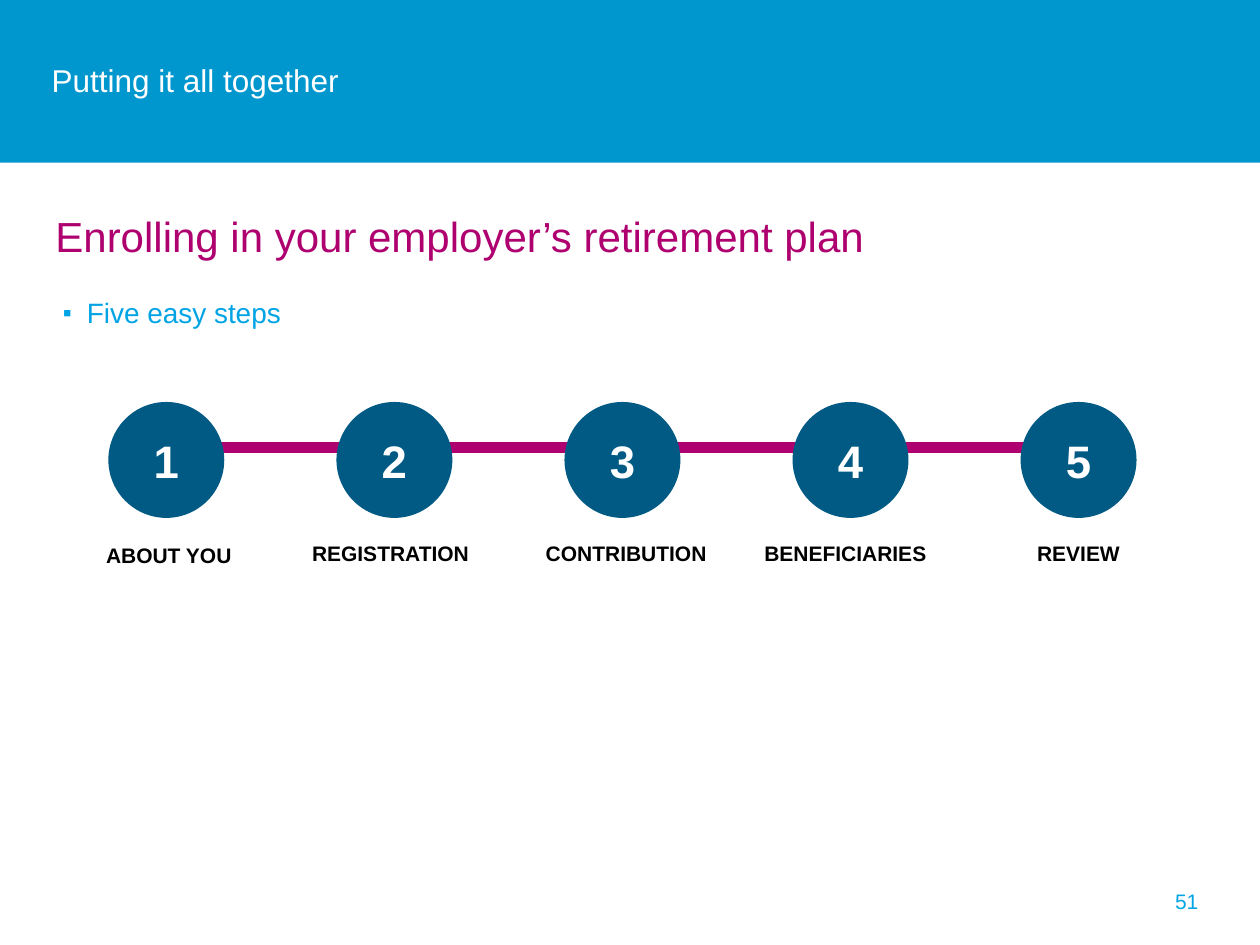
from lxml.etree import SubElement
from pptx import Presentation
from pptx.dml.color import RGBColor
from pptx.enum.shapes import MSO_CONNECTOR, MSO_SHAPE
from pptx.enum.text import MSO_ANCHOR, PP_ALIGN
from pptx.oxml.ns import qn
from pptx.util import Inches, Pt

WIDTH, HEIGHT = 10, 7.5
TITLE = "Putting it all together"
HEADING = "Enrolling in your employer’s retirement plan"
BULLET = "Five easy steps"
PAGE_NUMBER = "51"
STEPS = [
    ("ABOUT YOU", 0.02, 4.26),
    ("REGISTRATION", -0.03, 4.24),
    ("CONTRIBUTION", 0.03, 4.24),
    ("BENEFICIARIES", -0.04, 4.24),
    ("REVIEW", 0, 4.24),
]
BLUE, LIGHT_BLUE, NAVY = "0097CE", "00A4E4", "005A84"
MAGENTA, WHITE, BLACK = "AE006E", "FFFFFF", "000000"
FIRST_LEFT, PITCH, CIRCLE_TOP, DIAMETER = 0.86, 1.81, 3.19, 0.92
LINE_Y, LINE_START, LINE_OVERLAP = 3.55, 0.75, 0.06
LABEL_WIDTH, LABEL_HEIGHT = 1.5, 0.3


def color(value):
    return RGBColor.from_string(value)


def inches(*lengths):
    return [Inches(length) for length in lengths]


def write(paragraph, text, size, value, bold=False, align=PP_ALIGN.LEFT):
    paragraph.text = text
    paragraph.alignment = align
    font = paragraph.font
    font.name, font.size, font.bold = "Arial", Pt(size), bold
    font.color.rgb = color(value)


def add_filled(slide, kind, area, value):
    shape = slide.shapes.add_shape(kind, *inches(*area))
    shape.shadow.inherit = False
    shape.fill.solid()
    shape.fill.fore_color.rgb = color(value)
    shape.line.fill.background()
    return shape


def add_text_box(slide, area, wrap=True):
    box = slide.shapes.add_textbox(*inches(*area))
    box.text_frame.word_wrap = wrap
    return box.text_frame


def add_title(slide):
    title = slide.shapes.title
    title.left, title.top, title.width, title.height = inches(0.41, 0.39, 9.21, 0.49)
    frame = title.text_frame
    frame.margin_left = 0
    frame.vertical_anchor = MSO_ANCHOR.MIDDLE
    write(frame.paragraphs[0], TITLE, 18, WHITE)
    band = add_filled(slide, MSO_SHAPE.RECTANGLE, (0, 0, WIDTH, 1.29), BLUE)
    title.element.addprevious(band.element)


def add_body(slide):
    frame = add_text_box(slide, (0.44, 1.62, 9.16, 4.99))
    frame.margin_left = 0
    heading, bullet = frame.paragraphs[0], frame.add_paragraph()
    write(heading, HEADING, 24, MAGENTA)
    heading.space_after = Pt(9)
    bullet.level = 1
    bullet.line_spacing = 1.1
    bullet.space_before, bullet.space_after = Pt(9), Pt(4)
    properties = bullet._p.get_or_add_pPr()
    properties.set("marL", str(Inches(0.25)))
    properties.set("indent", str(Inches(-0.19)))
    bullet_color = SubElement(properties, qn("a:buClr"))
    SubElement(bullet_color, qn("a:srgbClr"), val=LIGHT_BLUE)
    SubElement(properties, qn("a:buSzPct"), val="90000")
    SubElement(properties, qn("a:buFont"), typeface="Arial")
    SubElement(properties, qn("a:buChar"), char="▪")
    write(bullet, BULLET, 16, LIGHT_BLUE)


def add_link(slide, left):
    start, end = left + LINE_START, left + PITCH + LINE_OVERLAP
    link = slide.shapes.add_connector(
        MSO_CONNECTOR.STRAIGHT, *inches(start, LINE_Y, end, LINE_Y))
    link.line.color.rgb = color(MAGENTA)
    link.line.width = Pt(6)
    SubElement(link.element.spPr, qn("a:effectLst"))


def add_step(slide, number, left, label, shift, label_top):
    circle = add_filled(slide, MSO_SHAPE.OVAL, (left, CIRCLE_TOP, DIAMETER, DIAMETER), NAVY)
    circle.text_frame.vertical_anchor = MSO_ANCHOR.MIDDLE
    write(circle.text_frame.paragraphs[0], str(number), 26, WHITE, True, PP_ALIGN.CENTER)
    label_left = left + (DIAMETER - LABEL_WIDTH) / 2 + shift
    frame = add_text_box(slide, (label_left, label_top, LABEL_WIDTH, LABEL_HEIGHT), wrap=False)
    write(frame.paragraphs[0], label, 12, BLACK, True, PP_ALIGN.CENTER)


def main():
    deck = Presentation()
    deck.slide_width, deck.slide_height = inches(WIDTH, HEIGHT)
    slide = deck.slides.add_slide(deck.slide_layouts[5])
    add_title(slide)
    add_body(slide)
    lefts = [FIRST_LEFT + PITCH * index for index in range(len(STEPS))]
    for left in lefts[:-1]:
        add_link(slide, left)
    for number, (left, step) in enumerate(zip(lefts, STEPS), 1):
        add_step(slide, number, left, *step)
    footer = add_text_box(slide, (7.28, 6.95, 2.33, 0.4))
    footer.vertical_anchor = MSO_ANCHOR.MIDDLE
    write(footer.paragraphs[0], PAGE_NUMBER, 12, LIGHT_BLUE, align=PP_ALIGN.RIGHT)
    deck.save("out.pptx")


if __name__ == "__main__":
    main()
